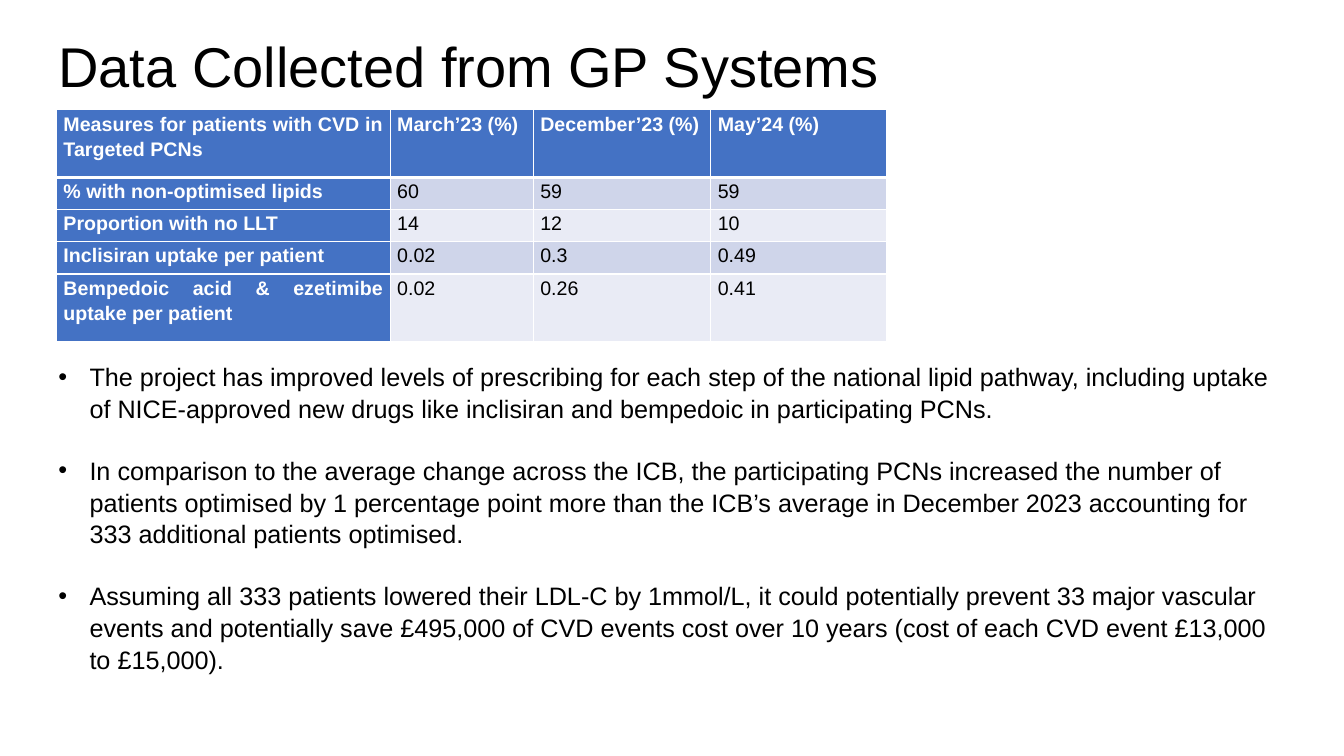
from dataclasses import dataclass

import pptx
import pptx.dml.color
import pptx.enum.text
import pptx.oxml
import pptx.oxml.ns
import pptx.util
from pptx.util import Inches

FONT = "Arial"
BLACK, WHITE, BLUE = "000000", "FFFFFF", "4472C4"
BANDS = ("CFD5EA", "E9EBF5")
INDENT = Inches(0.31)


@dataclass
class Measure:
    label: str
    values: tuple[str, ...]
    height: float = 0.32


HEADER = Measure("Measures for patients with CVD in Targeted PCNs",
                 ("March’23 (%)", "December’23 (%)", "May’24 (%)"), 0.67)
MEASURES = [
    Measure("% with non-optimised lipids", ("60", "59", "59")),
    Measure("Proportion with no LLT", ("14", "12", "10")),
    Measure("Inclisiran uptake per patient", ("0.02", "0.3", "0.49")),
    Measure("Bempedoic acid & ezetimibe uptake per patient", ("0.02", "0.26", "0.41"), 0.67),
]
COLUMN_WIDTHS = (3.31, 1.42, 1.76, 1.74)
FINDINGS = [
    "The project has improved levels of prescribing for each step of the national lipid pathway, "
    "including uptake of NICE-approved new drugs like inclisiran and bempedoic in participating PCNs.",
    "In comparison to the average change across the ICB, the participating PCNs increased the number "
    "of patients optimised by 1 percentage point more than the ICB’s average in December 2023 "
    "accounting for 333 additional patients optimised.",
    "Assuming all 333 patients lowered their LDL-C by 1mmol/L, it could potentially prevent 33 major "
    "vascular events and potentially save £495,000 of CVD events cost over 10 years (cost of each "
    "CVD event £13,000 to £15,000).",
]


def rgb(value: str) -> pptx.dml.color.RGBColor:
    return pptx.dml.color.RGBColor.from_string(value)


def format_runs(p, size: float, color: str = BLACK, bold: bool = False) -> None:
    for r in p.runs:
        r.font.name = FONT
        r.font.size = pptx.util.Pt(size)
        r.font.bold = bold
        r.font.color.rgb = rgb(color)


def add_borders(cell, widths: dict[str, float]) -> None:
    """Draw white cell borders; widths maps L, R, T and B to points."""
    tcPr = cell._tc.get_or_add_tcPr()
    for side, width in widths.items():
        tcPr.append(pptx.oxml.parse_xml(
            f'<a:ln{side} {pptx.oxml.ns.nsdecls("a")} w="{pptx.util.Pt(width)}">'
            f'<a:solidFill><a:srgbClr val="{WHITE}"/></a:solidFill></a:ln{side}>'))


def add_title(s) -> None:
    title = s.shapes.title
    title.left, title.top = Inches(0.48), Inches(0.29)
    title.width, title.height = Inches(10.16), Inches(0.8)
    tf = title.text_frame
    tf.text = "Data Collected from GP Systems"
    tf.vertical_anchor = pptx.enum.text.MSO_ANCHOR.MIDDLE
    p = tf.paragraphs[0]
    p.alignment = pptx.enum.text.PP_ALIGN.LEFT
    p.line_spacing = 0.9
    format_runs(p, 40)


def add_measures_table(s) -> None:
    rows = [HEADER, *MEASURES]
    table = s.shapes.add_table(
        len(rows), len(COLUMN_WIDTHS), Inches(0.56), Inches(1.09),
        Inches(sum(COLUMN_WIDTHS)), Inches(sum(m.height for m in rows))).table
    table.first_col = True
    for column, width in zip(table.columns, COLUMN_WIDTHS):
        column.width = Inches(width)
    for i, measure in enumerate(rows):
        table.rows[i].height = Inches(measure.height)
        for j, text in enumerate((measure.label, *measure.values)):
            cell = table.cell(i, j)
            heading = i == 0 or j == 0
            cell.margin_left = cell.margin_right = Inches(0.07)
            cell.margin_top = cell.margin_bottom = 0
            add_borders(cell, {"L": 1, "R": 1, "T": 3 if i == 1 else 1, "B": 3 if i == 0 else 1})
            cell.fill.solid()
            cell.fill.fore_color.rgb = rgb(BLUE if heading else BANDS[(i - 1) % 2])
            p = cell.text_frame.paragraphs[0]
            p.text = text
            p.alignment = pptx.enum.text.PP_ALIGN.JUSTIFY
            p.line_spacing = 1.15
            p.space_after = pptx.util.Pt(3)
            format_runs(p, 14, WHITE if heading else BLACK, heading)


def add_findings(s) -> None:
    tf = s.shapes.add_textbox(Inches(0.48), Inches(3.52), Inches(12.24), Inches(3.13)).text_frame
    tf.word_wrap = True
    tf.auto_size = pptx.enum.text.MSO_AUTO_SIZE.SHAPE_TO_FIT_TEXT
    for i, finding in enumerate(FINDINGS):
        p = tf.add_paragraph() if i else tf.paragraphs[0]
        p.text = finding
        p.line_spacing = 1.05
        if i:
            p.space_before = pptx.util.Pt(21.7)
        pPr = p._p.get_or_add_pPr()
        pPr.set("marL", str(INDENT))
        pPr.set("indent", str(-INDENT))
        for bullet in ('buFont typeface="Arial"', 'buChar char="•"'):
            pPr.append(pptx.oxml.parse_xml(f'<a:{bullet} {pptx.oxml.ns.nsdecls("a")}/>'))
        format_runs(p, 18)


def main() -> None:
    prs = pptx.Presentation()
    prs.slide_width, prs.slide_height = Inches(13.33), Inches(7.5)
    s = prs.slides.add_slide(prs.slide_layouts.get_by_name("Title Only"))
    add_title(s)
    add_measures_table(s)
    add_findings(s)
    prs.save("out.pptx")


if __name__ == "__main__":
    main()
